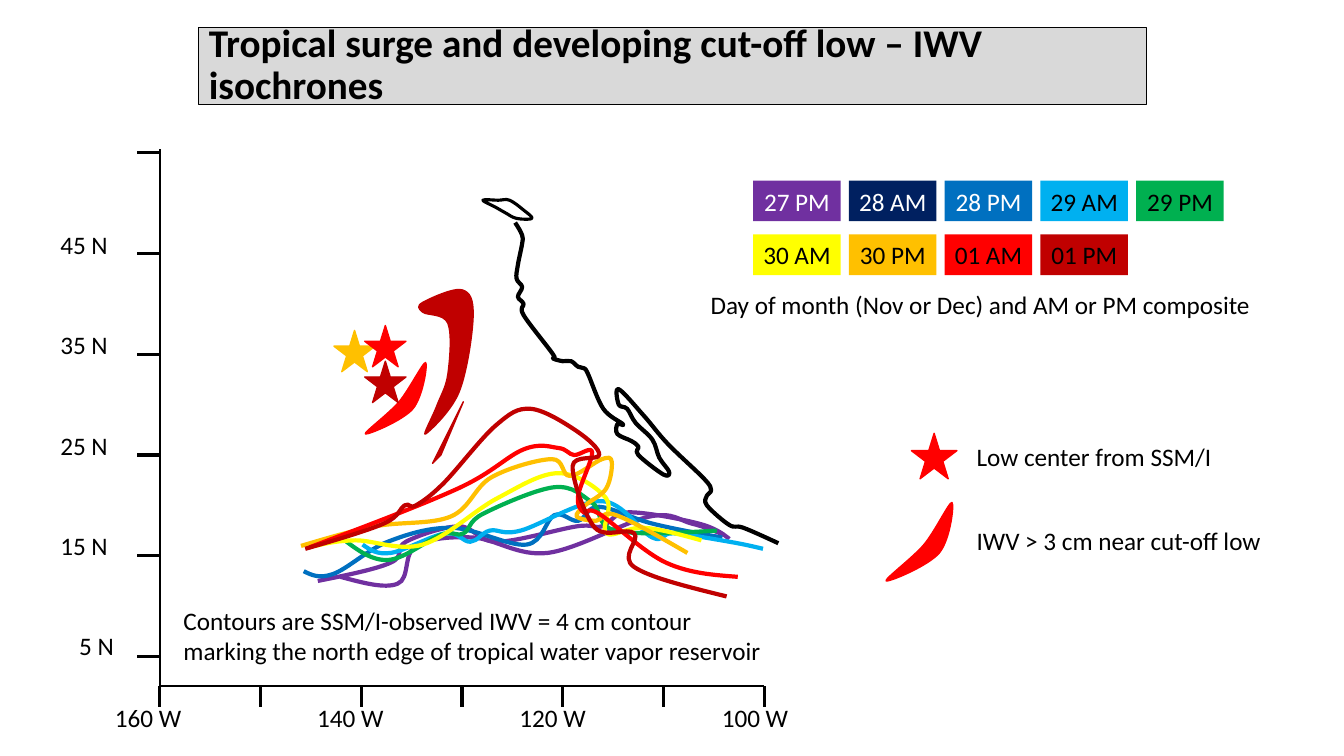
from lxml import etree
from pptx import Presentation
from pptx.dml.color import RGBColor
from pptx.enum.shapes import MSO_CONNECTOR, MSO_SHAPE
from pptx.enum.text import MSO_ANCHOR, PP_ALIGN
from pptx.oxml.ns import qn
from pptx.util import Pt

STRAIGHT = MSO_CONNECTOR.STRAIGHT
RECTANGLE, STAR = MSO_SHAPE.RECTANGLE, MSO_SHAPE.STAR_5_POINT
MIDDLE, LEFT, CENTER = MSO_ANCHOR.MIDDLE, PP_ALIGN.LEFT, PP_ALIGN.CENTER
FONT = "Calibri"
COLOURS = {
    "black": "000000", "white": "FFFFFF", "grey": "D9D9D9",
    "purple": "7030A0", "navy": "002060", "blue": "0070C0",
    "sky": "00B0F0", "green": "00B050", "yellow": "FFFF00",
    "amber": "FFC000", "red": "FF0000", "crimson": "C00000",
}
RGB = {name: RGBColor.from_string(value) for name, value in COLOURS.items()}

prs = Presentation()
prs.slide_width, prs.slide_height = Pt(960), Pt(540)
slide = prs.slides.add_slide(prs.slide_layouts[5])
shapes = slide.shapes


def draw_curve(anchors, colour, weight, closed=False, filled=False, smooth=True):
    """Draw an outline through the anchors, as Catmull-Rom Bézier curves if smooth."""
    knots = [complex(x, y) for x, y in anchors]
    if closed:
        padded = [knots[-1], *knots, *knots[:2]]
    else:
        before, after = (2.5 * p - 2 * q + 0.5 * r
                         for p, q, r in (knots[:3], knots[:-4:-1]))
        padded = [before, *knots, after]
    points = []
    for a, b, c, d in zip(padded, padded[1:], padded[2:], padded[3:]):
        points += [b + (c - a) / 6, c - (d - b) / 6, c] if smooth else [c]
    builder = shapes.build_freeform(Pt(anchors[0][0]), Pt(anchors[0][1]))
    builder.add_line_segments([(Pt(z.real), Pt(z.imag)) for z in points], close=closed)
    curve = builder.convert_to_shape()
    if smooth:
        segments = list(curve._element.spPr.iter(qn("a:lnTo")))
        for i in range(0, len(segments), 3):
            bezier = etree.Element(qn("a:cubicBezTo"))
            segments[i].addprevious(bezier)
            for segment in segments[i:i + 3]:
                bezier.append(segment[0])
                segment.getparent().remove(segment)
    curve.shadow.inherit = False
    curve.line.color.rgb = RGB[colour]
    curve.line.width = Pt(weight)
    if filled:
        curve.fill.solid()
        curve.fill.fore_color.rgb = RGB[colour]
    else:
        curve.fill.background()


def add_label(left, top, width, *lines):
    frame = shapes.add_textbox(Pt(left), Pt(top), Pt(width), Pt(29 * len(lines))).text_frame
    frame.word_wrap = True
    frame.text = "\n".join(lines)
    for paragraph in frame.paragraphs:
        paragraph.font.name, paragraph.font.size = FONT, Pt(18)
        paragraph.font.color.rgb = RGB["black"]


# Title
title = shapes.title
title.left, title.top, title.width, title.height = Pt(142), Pt(19.5), Pt(677), Pt(55)
title.fill.solid()
title.fill.fore_color.rgb = RGB["grey"]
title.line.color.rgb = RGB["black"]
title.line.width = Pt(0.75)
title.text_frame.text = "Tropical surge and developing cut-off low – IWV isochrones"
title.text_frame.word_wrap = True
title.text_frame.vertical_anchor = MIDDLE
heading = title.text_frame.paragraphs[0]
heading.alignment, heading.line_spacing = LEFT, 0.9
heading.font.name, heading.font.size, heading.font.bold = FONT, Pt(28), True
heading.font.color.rgb = RGB["black"]

# IWV = 4 cm contours
isochrones = [
    ("purple", [(243, 412), (284, 417), (297, 390), (338, 384), (391, 395),
                (464, 369), (494, 374), (517, 382)]),
    ("purple", [(227, 415), (279, 402), (290, 387), (328, 376), (355, 387),
                (412, 376), (430, 376), (449, 366), (499, 374), (521, 385)]),
    ("blue", [(217, 408), (238, 410), (277, 387), (323, 377), (376, 389),
              (396, 368), (413, 372), (428, 362), (466, 374), (516, 384)]),
    ("sky", [(259, 389), (279, 395), (318, 381), (336, 387), (350, 379), (372, 379),
             (430, 358), (466, 384), (481, 381), (521, 387), (545, 392)]),
    ("green", [(245, 385), (277, 400), (315, 382), (331, 381), (345, 367),
               (396, 348), (423, 359), (440, 379), (512, 379)]),
    ("yellow", [(225, 390), (254, 386), (302, 389), (355, 356), (399, 338),
                (433, 356), (433, 381), (460, 377), (501, 386)]),
    ("amber", [(215, 390), (268, 376), (322, 369), (351, 341), (394, 328),
               (407, 340), (430, 328), (437, 330), (433, 349), (418, 361),
               (412, 369), (426, 372), (440, 368), (491, 395)]),
    ("red", [(221, 391), (327, 349), (374, 321), (399, 320), (410, 325), (423, 323),
             (413, 354), (417, 366), (428, 367), (476, 402), (527, 412)]),
    ("crimson", [(218, 392), (274, 374), (289, 361), (297, 361), (317, 345),
                 (354, 304), (379, 292), (412, 308), (428, 325), (409, 333),
                 (425, 377), (453, 381), (453, 405), (519, 426)]),
]
for colour, anchors in isochrones:
    draw_curve(anchors, colour, 3)

# IWV > 3 cm areas near the cut-off low
moist_areas = [
    ("red", True, [(633, 415), (660, 389), (680, 359), (671, 395)]),
    ("red", True, [(261, 310), (285, 287), (304, 259), (295, 292)]),
    ("crimson", True, [(302, 216), (330, 207), (338, 226), (328, 280), (304, 310),
                       (312, 290), (320, 267), (320, 231), (302, 223)]),
    ("crimson", False, [(315, 325), (331, 287), (309, 331)]),
]
for colour, smooth, anchors in moist_areas:
    draw_curve(anchors, colour, 1, closed=True, filled=True, smooth=smooth)

# Low centers
for colour, left, top, size in [("amber", 238.5, 236, 29.5), ("red", 260.5, 232.5, 29.5),
                                ("crimson", 260.5, 258, 29.5), ("red", 651, 309.5, 32.5)]:
    low_center = shapes.add_shape(STAR, Pt(left), Pt(top), Pt(size), Pt(size))
    low_center.shadow.inherit = False
    low_center.fill.solid()
    low_center.fill.fore_color.rgb = low_center.line.color.rgb = RGB[colour]
    low_center.line.width = Pt(1)

# Coastline
island = [(345, 143), (354, 148), (361, 152), (369, 156), (380, 156), (374, 150),
          (364, 143), (356, 143)]
coast = [(368, 159), (373, 168), (373, 174), (370, 189), (369, 199), (373, 205),
         (370, 212), (374, 217), (374, 225), (395, 253), (395, 256), (402, 258),
         (408, 258), (413, 262), (417, 263), (420, 267), (431, 292), (445, 303),
         (441, 303), (441, 310), (451, 315), (456, 319), (456, 325), (474, 339),
         (478, 337), (471, 327), (466, 314), (454, 302), (448, 292), (442, 289),
         (442, 278), (460, 297), (477, 317), (503, 342), (508, 350), (505, 354),
         (505, 361), (521, 375), (531, 377), (556, 388)]
draw_curve(island, "black", 2.25, closed=True)
draw_curve(coast, "black", 3)

# Axes, with a tick every ten degrees
axis_x, axis_y, ten_degrees = 114, 490, 72
axis_lines = [(axis_x, axis_y, 546, axis_y, 1.5), (axis_x, 106.5, axis_x, axis_y, 1.5)]
for i in range(7):
    x = axis_x + ten_degrees * i
    axis_lines.append((x, 505, x, axis_y, 2.25))
for i in range(6):
    y = 109 + ten_degrees * i
    axis_lines.append((98, y, axis_x, y, 2.25))
for x1, y1, x2, y2, weight in axis_lines:
    axis_line = shapes.add_connector(STRAIGHT, Pt(x1), Pt(y1), Pt(x2), Pt(y2))
    axis_line.line.color.rgb = RGB["black"]
    axis_line.line.width = Pt(weight)
    etree.SubElement(axis_line._element.spPr, qn("a:effectLst"))

for i, longitude in enumerate(["160 W", "140 W", "120 W", "100 W"]):
    add_label(75 + 144.5 * i, 498, 89, longitude)
for i, latitude in enumerate(["45 N", "35 N", "25 N", "15 N", "5 N"]):
    add_label(49.5 if latitude == "5 N" else 36, 160.5 + 71.5 * i, 56, latitude)

# Legend
legend_rows = [
    [("27 PM", "purple", "white"), ("28 AM", "navy", "white"), ("28 PM", "blue", "white"),
     ("29 AM", "sky", "black"), ("29 PM", "green", "black")],
    [("30 AM", "yellow", "black"), ("30 PM", "amber", "black"), ("01 AM", "red", "black"),
     ("01 PM", "crimson", "black")],
]
for row, composites in enumerate(legend_rows):
    for column, (composite, colour, text_colour) in enumerate(composites):
        swatch = shapes.add_shape(RECTANGLE, Pt(538 + 68.4 * column), Pt(129 + 38.5 * row),
                                  Pt(62.5), Pt(29))
        swatch.shadow.inherit = False
        swatch.fill.solid()
        swatch.fill.fore_color.rgb = RGB[colour]
        swatch.line.fill.background()
        swatch.text_frame.text = composite
        swatch.text_frame.word_wrap = False
        caption = swatch.text_frame.paragraphs[0]
        caption.alignment = CENTER
        caption.font.name, caption.font.size = FONT, Pt(18)
        caption.font.color.rgb = RGB[text_colour]

add_label(500.5, 203, 405, "Day of month (Nov or Dec) and AM or PM composite")
add_label(690.5, 312, 184, "Low center from SSM/I")
add_label(690.5, 371.5, 221, "IWV > 3 cm near cut-off low")
add_label(124, 429, 432, "Contours are SSM/I-observed IWV = 4 cm contour",
          "marking the north edge of tropical water vapor reservoir")

prs.save("out.pptx")
